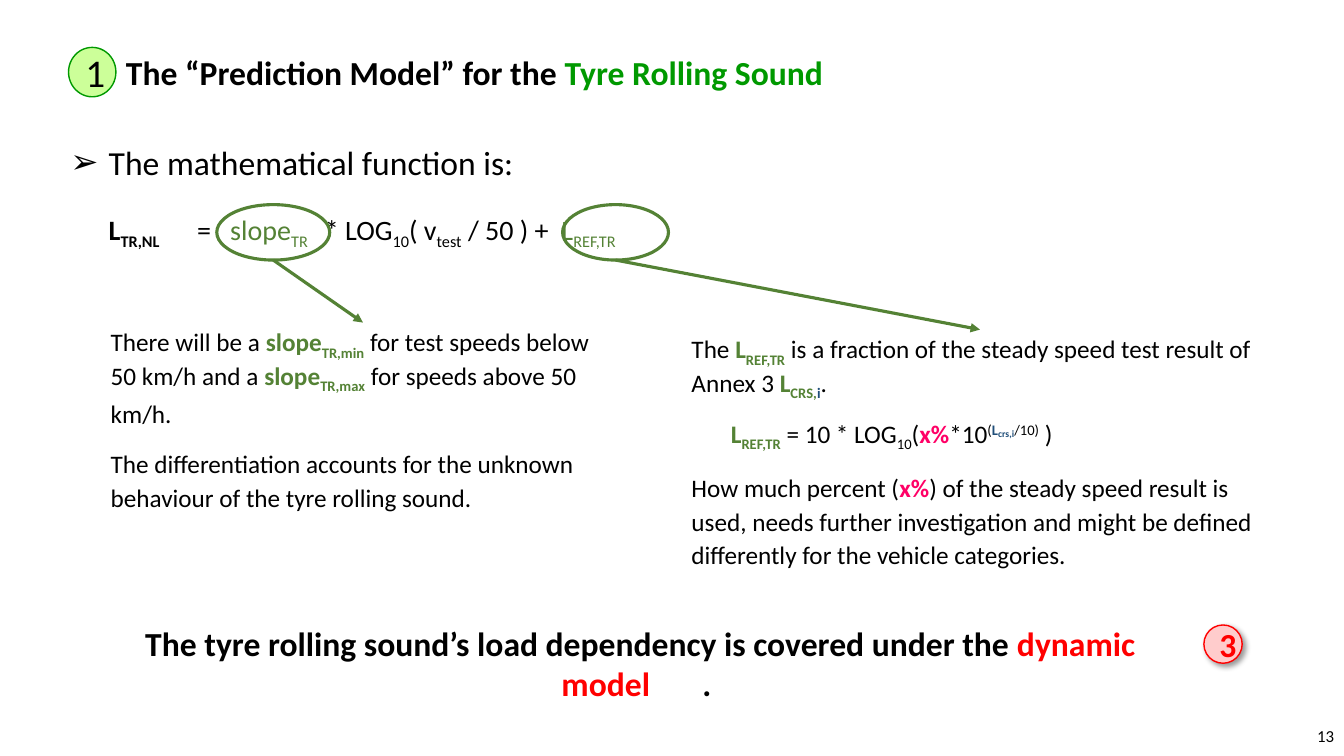
"""Build the slide on the prediction model for the tyre rolling sound."""
from dataclasses import dataclass

from lxml.etree import SubElement
from pptx import Presentation
from pptx.dml.color import RGBColor
from pptx.enum.shapes import MSO_CONNECTOR, MSO_SHAPE
from pptx.enum.text import MSO_ANCHOR, PP_ALIGN
from pptx.oxml import parse_xml
from pptx.oxml.ns import nsdecls, qn
from pptx.util import Inches, Pt

BLACK = RGBColor(0x00, 0x00, 0x00)
TITLE_GREEN = RGBColor(0x00, 0x99, 0x00)
GREEN = RGBColor(0x54, 0x82, 0x35)
NAVY = RGBColor(0x1F, 0x4E, 0x79)
PINK = RGBColor(0xFF, 0x00, 0x66)
RED = RGBColor(0xFF, 0x00, 0x00)
LIGHT_GREEN = RGBColor(0xCC, 0xFF, 0x99)
LIGHT_RED = RGBColor(0xFF, 0xCC, 0xCC)
FONT = "Calibri"
SUB, SUPER = -25, 30


@dataclass
class Piece:
    """A stretch of text in one style."""
    text: str
    color: RGBColor = BLACK
    bold: bool = False
    baseline: int = 0
    size: float = 0
    spacing: float = 0


@dataclass
class Block:
    """A paragraph with its layout."""
    pieces: list
    size: float
    align: PP_ALIGN = PP_ALIGN.LEFT
    before: float = 0
    after: float = 0
    line: float = 0
    margin: float = 0
    bullet: str = ""


def symbol(name, index, bold=True):
    return [Piece(name, GREEN, bold), Piece(index, GREEN, bold, SUB)]


def gap(extra):
    return Piece(" ", spacing=extra)


TITLE = [Block([Piece("The “Prediction Model” for the ", bold=True),
                Piece("Tyre Rolling Sound", TITLE_GREEN, True)], 24)]
FORMULA = [
    Block([Piece("The mathematical function is:")], 24, before=6, margin=0.38, bullet="➢"),
    Block([Piece("L", bold=True), Piece("TR,NL", bold=True, baseline=SUB), gap(22.3),
           Piece("="), gap(9), *symbol("slope", "TR", False), gap(7.5), Piece("* LOG"),
           Piece("10", baseline=SUB), Piece("( v"), Piece("test", baseline=SUB),
           Piece(" / 50 ) +"), gap(4.5), *symbol("L", "REF,TR", False)],
          20, before=21.5, margin=0.38),
]
SLOPE_NOTE = [
    Block([Piece("There will be a "), *symbol("slope", "TR,min"),
           Piece(" for test speeds below 50 km/h and a "), *symbol("slope", "TR,max"),
           Piece(" for speeds above 50 km/h.")], 18, before=12, line=24),
    Block([Piece("The differentiation accounts for the unknown behaviour of the tyre "
                 "rolling sound.")], 18, before=12, line=24),
]
REFERENCE_NOTE = [
    Block([Piece("The "), *symbol("L", "REF,TR"),
           Piece(" is a fraction of the steady speed test result of Annex 3 "),
           *symbol("L", "CRS,"), Piece("i", NAVY, True, SUB), Piece(".")], 18, line=24),
    Block([*symbol("L", "REF,TR"), Piece(" = 10 * LOG"),
           Piece("10", baseline=SUB), Piece("("), Piece("x%", PINK, True), Piece("*10"),
           Piece("(", baseline=SUPER), Piece("L", NAVY, True, SUPER),
           Piece("crs,i", NAVY, True, SUPER, 12), Piece("/10)", baseline=SUPER),
           Piece(" )")], 18, before=12, after=12, line=24, margin=0.39),
    Block([Piece("How much percent ("), Piece("x%", PINK, True),
           Piece(") of the steady speed result is used, needs further investigation and "
                 "might be defined differently for the vehicle categories.")], 18, line=24),
]
CONCLUSION = [Block([
    Piece("The tyre rolling sound’s load dependency is covered under the ", bold=True),
    Piece("dynamic model", RED, True), gap(32), Piece(". ", bold=True)],
    24, PP_ALIGN.CENTER)]
PAGE_NUMBER = [Block([Piece("13")], 12, PP_ALIGN.RIGHT)]

TEXTS = [
    (TITLE, (1.15, 0.47, 10.31, 0.5), 0.1, MSO_ANCHOR.TOP),
    (FORMULA, (0.6, 1.36, 11.42, 1.14), 0.1, MSO_ANCHOR.TOP),
    (SLOPE_NOTE, (1, 3.2, 5.2, 1.95), 0.1, MSO_ANCHOR.TOP),
    (REFERENCE_NOTE, (6.76, 3.27, 5.91, 2.46), 0.1, MSO_ANCHOR.TOP),
    (CONCLUSION, (0.56, 6.13, 11.58, 0.91), 0.7, MSO_ANCHOR.TOP),
    (PAGE_NUMBER, (10.33, 7.1, 3, 0.4), 0.1, MSO_ANCHOR.MIDDLE),
]
BADGES = [
    (Piece("1"), 28, (0.68, 0.47, 0.47, 0.49), LIGHT_GREEN, TITLE_GREEN, False),
    (Piece("3", RED, True), 24, (11.94, 6.2, 0.38, 0.38), LIGHT_RED, RED, True),
]
CALLOUTS = [
    ((2.15, 2.03, 1.12, 0.55), (3.6, 3.2)),
    ((5.58, 2.03, 1.05, 0.55), (9.72, 3.27)),
]
SHADOW = (
    f'<a:effectLst {nsdecls("a")}><a:outerShdw blurRad="{Pt(4)}" dist="{Pt(3)}" '
    'dir="2700000" algn="tl" rotWithShape="0"><a:srgbClr val="000000">'
    '<a:alpha val="40000"/></a:srgbClr></a:outerShdw></a:effectLst>')


def write(text_frame, blocks):
    for number, block in enumerate(blocks):
        paragraph = text_frame.add_paragraph() if number else text_frame.paragraphs[0]
        paragraph.alignment = block.align
        paragraph.space_before = Pt(block.before)
        paragraph.space_after = Pt(block.after)
        if block.line:
            paragraph.line_spacing = Pt(block.line)
        properties = paragraph._p.get_or_add_pPr()
        properties.set("marL", str(Inches(block.margin)))
        properties.set("indent", str(-Inches(block.margin) if block.bullet else 0))
        if block.bullet:
            SubElement(properties, qn("a:buFont"), typeface=FONT)
            SubElement(properties, qn("a:buChar"), char=block.bullet)
        for piece in block.pieces:
            run = paragraph.add_run()
            run.text = piece.text
            run.font.name = FONT
            run.font.size = Pt(piece.size or block.size)
            run.font.bold = piece.bold
            run.font.color.rgb = piece.color
            if piece.baseline:
                run.font._element.set("baseline", str(piece.baseline * 1000))
            if piece.spacing:
                run.font._element.set("spc", str(round(piece.spacing * 100)))


def add_text(slide, blocks, box, side_margin, anchor):
    text_frame = slide.shapes.add_textbox(*map(Inches, box)).text_frame
    text_frame.word_wrap = True
    text_frame.margin_left = text_frame.margin_right = Inches(side_margin)
    text_frame.vertical_anchor = anchor
    write(text_frame, blocks)


def add_ellipse(slide, box, line_color, line_width):
    shape = slide.shapes.add_shape(MSO_SHAPE.OVAL, *map(Inches, box))
    shape.shadow.inherit = False
    shape.fill.background()
    shape.line.color.rgb = line_color
    shape.line.width = Pt(line_width)
    return shape


def add_badge(slide, piece, size, box, fill, line_color, shadow):
    shape = add_ellipse(slide, box, line_color, 1)
    shape.fill.solid()
    shape.fill.fore_color.rgb = fill
    if shadow:
        properties = shape._element.spPr
        properties.replace(properties.find(qn("a:effectLst")), parse_xml(SHADOW))
    shape.text_frame.vertical_anchor = MSO_ANCHOR.MIDDLE
    write(shape.text_frame, [Block([piece], size, PP_ALIGN.CENTER)])


def add_callout(slide, box, target):
    add_ellipse(slide, box, GREEN, 2.25)
    left, top, width, height = box
    ends = (left + width / 2, top + height, *target)
    arrow = slide.shapes.add_connector(MSO_CONNECTOR.STRAIGHT, *map(Inches, ends))
    arrow.line.color.rgb = GREEN
    arrow.line.width = Pt(2.25)
    SubElement(arrow.line._get_or_add_ln(), qn("a:tailEnd"), type="triangle")
    SubElement(arrow._element.spPr, qn("a:effectLst"))


def main():
    presentation = Presentation()
    presentation.slide_width, presentation.slide_height = Inches(13.33), Inches(7.5)
    slide = presentation.slides.add_slide(presentation.slide_layouts[6])
    for text in TEXTS:
        add_text(slide, *text)
    for badge in BADGES:
        add_badge(slide, *badge)
    for callout in CALLOUTS:
        add_callout(slide, *callout)
    presentation.save("out.pptx")


if __name__ == "__main__":
    main()
